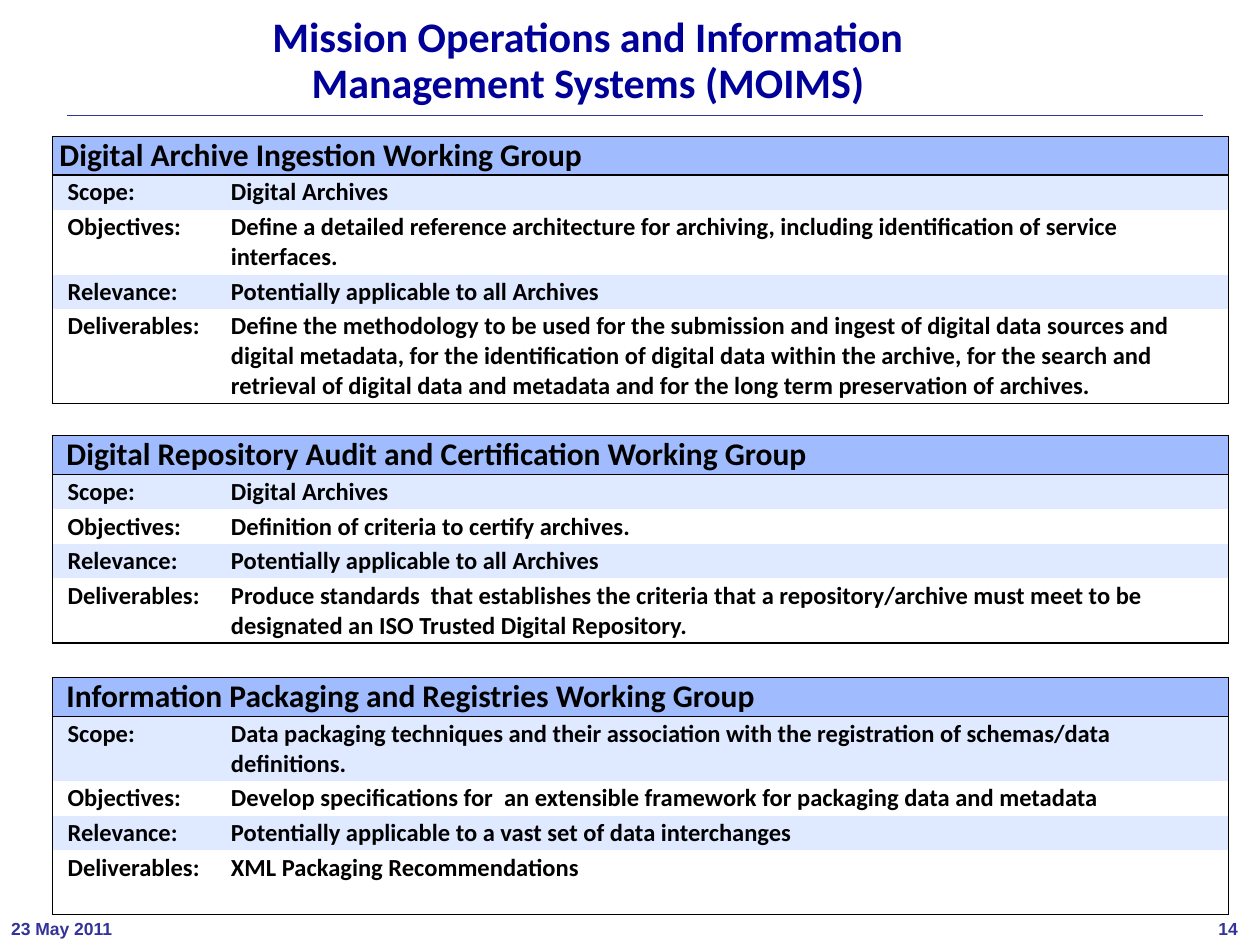
import pptx
import pptx.dml.color
import pptx.enum.text
import pptx.oxml
import pptx.oxml.ns
import pptx.util

Pt = pptx.util.Pt
Align = pptx.enum.text.PP_ALIGN
Anchor = pptx.enum.text.MSO_ANCHOR
Fit = pptx.enum.text.MSO_AUTO_SIZE

COLORS = {"title": "000099", "foot": "333399", "text": "000000",
          "head": "A0BCFE", "band": "DFE9FF", "edge": "000000"}
FONTS = {
    "title": {"name": "Calibri", "size": Pt(24), "bold": True},
    "head": {"name": "Calibri", "size": Pt(18), "bold": True},
    "body": {"name": "Calibri", "size": Pt(14), "bold": True},
    "foot": {"name": "Arial", "size": Pt(10), "bold": True},
}
FRAMES = {
    "title": {"word_wrap": True, "vertical_anchor": Anchor.TOP},
    "foot": {"word_wrap": False, "auto_size": Fit.SHAPE_TO_FIT_TEXT,
             "vertical_anchor": Anchor.TOP,
             "margin_left": Pt(6.4), "margin_right": Pt(6.4),
             "margin_top": Pt(3.2), "margin_bottom": Pt(3.2)},
}
LABELS = ["Scope:", "Objectives:", "Relevance:", "Deliverables:"]

# Each group: top, heading indent, heading, row heights, row texts
GROUPS = [
    (77.9, 4, "Digital Archive Ingestion Working Group", [19.8, 37, 19.8, 54], [
        "Digital Archives",
        "Define a detailed reference architecture for archiving, including "
        "identification of service interfaces.",
        "Potentially applicable to all Archives",
        "Define the methodology to be used for the submission and ingest of "
        "digital data sources and digital metadata, for the identification of "
        "digital data within the archive, for the search and retrieval of "
        "digital data and metadata and for the long term preservation of "
        "archives."]),
    (249, 8, "Digital Repository Audit and Certification Working Group",
     [19.8, 19.8, 19.8, 37], [
        "Digital Archives",
        "Definition of criteria to certify archives.",
        "Potentially applicable to all Archives",
        "Produce standards  that establishes the criteria that a "
        "repository/archive must meet to be designated an ISO Trusted Digital "
        "Repository."]),
    (387.2, 8, "Information Packaging and Registries Working Group",
     [37, 19.8, 19.8, 36.5], [
        "Data packaging techniques and their association with the "
        "registration of schemas/data definitions.",
        "Develop specifications for  an extensible framework for packaging "
        "data and metadata",
        "Potentially applicable to a vast set of data interchanges",
        "XML Packaging Recommendations"]),
]


def color(key):
    return pptx.dml.color.RGBColor.from_string(COLORS[key])


def write(frame, text, style, tint):
    para = frame.paragraphs[0]
    run = para.add_run()
    run.text = text
    for name, value in FONTS[style].items():
        setattr(run.font, name, value)
    run.font.color.rgb = color(tint)
    return para


def add_text(slide, box, text, style):
    frame = slide.shapes.add_textbox(*map(Pt, box)).text_frame
    for name, value in FRAMES[style].items():
        setattr(frame, name, value)
    return write(frame, text, style, style)


def add_title(slide, box, text):
    para = add_text(slide, box, text, "title")
    para.alignment = Align.CENTER
    para.line_spacing = 0.9


def add_rule(slide, left, right, y):
    rule = slide.shapes.add_connector(1, Pt(left), Pt(y), Pt(right), Pt(y))
    rule.line.color.rgb = color("foot")
    rule.line.width = Pt(0.12)
    rule._element.spPr.append(
        pptx.oxml.parse_xml(f'<a:effectLst {pptx.oxml.ns.nsdecls("a")}/>'))


def set_edges(cell, sides):
    """Draw the named sides (L, R, T, B) and clear the others."""
    props = cell._tc.get_or_add_tcPr()
    for spot, side in enumerate("LRTB"):
        paint = (f'<a:solidFill><a:srgbClr val="{COLORS["edge"]}"/></a:solidFill>'
                 if side in sides else "<a:noFill/>")
        props.insert(spot, pptx.oxml.parse_xml(
            f'<a:ln{side} {pptx.oxml.ns.nsdecls("a")} w="12700">{paint}</a:ln{side}>'))


def fill_cell(cell, text, style, fill, indent, pad, sides):
    margins = {"margin_left": indent, "margin_right": 0,
               "margin_top": pad, "margin_bottom": pad}
    for name, value in margins.items():
        setattr(cell, name, Pt(value))
    if fill:
        cell.fill.solid()
        cell.fill.fore_color.rgb = color(fill)
    else:
        cell.fill.background()
    if text:
        write(cell.text_frame, text, style, "text")
    set_edges(cell, sides)


def add_group(slide, left, top, width, indent, heading, heights, texts):
    heights = [22.2] + heights
    table = slide.shapes.add_table(
        len(heights), 2, Pt(left), Pt(top), Pt(width), Pt(sum(heights))).table
    table.first_row = table.horz_banding = False
    for col, size in zip(table.columns, (102, width - 102)):
        col.width = Pt(size)
    for row, size in zip(table.rows, heights):
        row.height = Pt(size)

    # Heading across both columns
    first, second = table.cell(0, 0), table.cell(0, 1)
    first.merge(second)
    fill_cell(first, heading, "head", "head", indent, 0, "LRTB")
    fill_cell(second, "", "head", "head", 0, 0, "RTB")

    # Labelled rows, every other one shaded
    last = len(texts)
    for row, pair in enumerate(zip(LABELS, texts), 1):
        fill = "band" if row % 2 else None
        ends = ("T" if row == 1 else "") + ("B" if row == last else "")
        for col, (text, side, inset) in enumerate(zip(pair, "LR", (8.64, 0))):
            fill_cell(table.cell(row, col), text, "body", fill, inset, 1.44,
                      side + ends)


def add_foot(slide, top, date, number):
    add_text(slide, (0, top, 71.2, 18.6), date, "foot")
    add_text(slide, (689.8, top, 25, 18.6), number, "foot")


def main():
    deck = pptx.Presentation()
    deck.slide_width, deck.slide_height = Pt(720), Pt(540)
    slide = deck.slides.add_slide(deck.slide_layouts[6])
    add_rule(slide, 38.2, 687.6, 66)
    add_foot(slide, 521.3, "23 May 2011", "14")
    add_title(slide, (102, 5.8, 468, 38),
              "Mission Operations and Information Management Systems (MOIMS)")
    for top, *rest in GROUPS:
        add_group(slide, 30, top, 672, *rest)
    deck.save("out.pptx")


if __name__ == "__main__":
    main()
